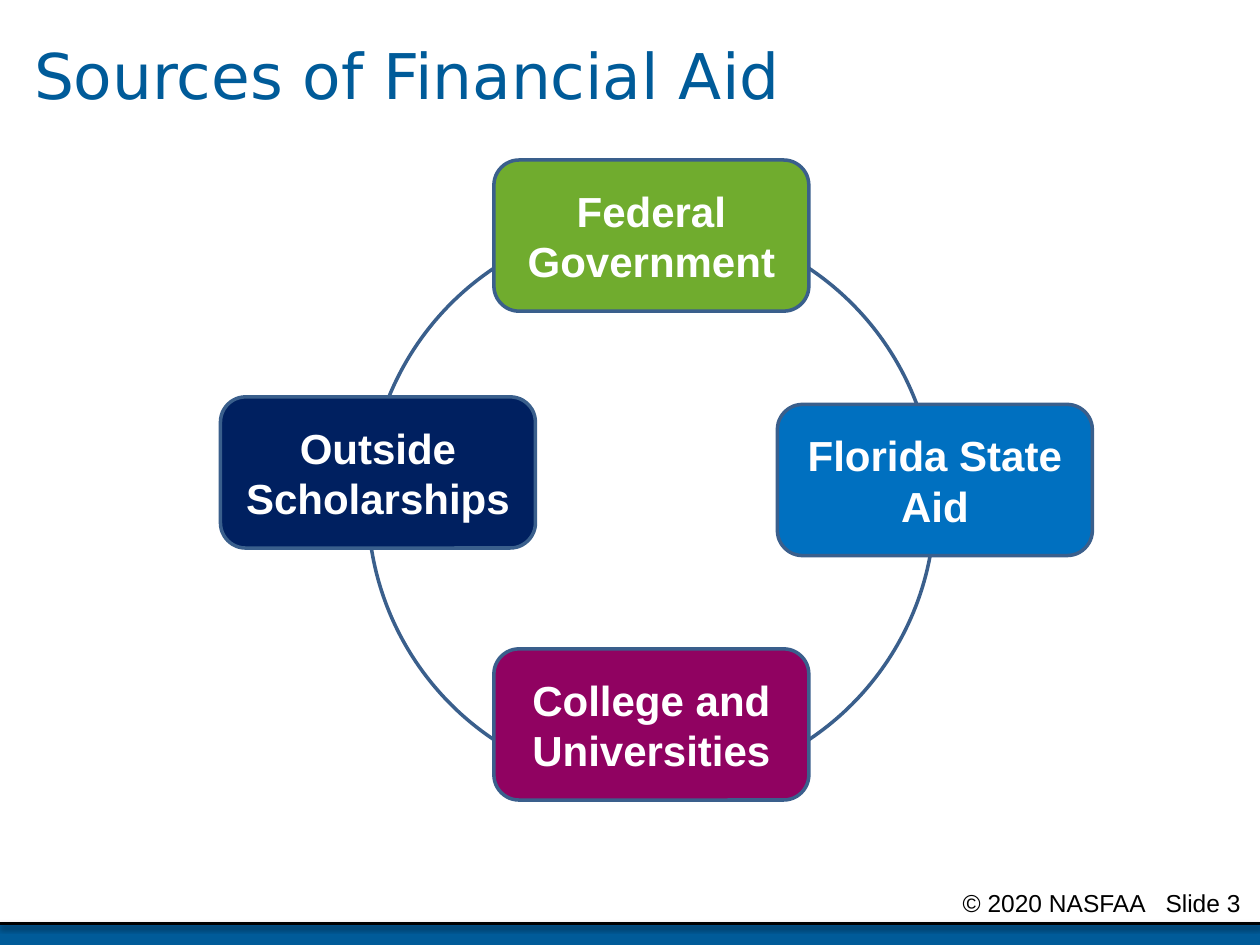
from lxml import etree
from pptx import Presentation, util as u
from pptx.dml.color import RGBColor
from pptx.enum import shapes, text
from pptx.oxml.ns import qn

WIDTH, HEIGHT = 10, 7.5
BOX_WIDTH, BOX_HEIGHT = 2.5, 1.2
RING_LEFT, RING_TOP, RING_SIZE = 2.92, 1.75, 4.5
CENTER_COLUMN = RING_LEFT + RING_SIZE / 2 - BOX_WIDTH / 2
FOOTER_TOP = 7.33
BLUE, OUTLINE, BLACK, WHITE = "005B99", "3A5F8C", "000000", "FFFFFF"

SOURCES = [
    ("Federal Government", CENTER_COLUMN, 1.27, "70AC2E"),
    ("Florida State\nAid", 6.17, 3.21, "0070C0"),
    ("College and Universities", CENTER_COLUMN, 5.15, "900261"),
    ("Outside Scholarships", 1.75, 3.15, "002060"),
]


def rgb(value):
    return RGBColor.from_string(value)


def inches(*lengths):
    return [u.Inches(length) for length in lengths]


def style_text(frame, size, font, color, align, bold=False):
    for paragraph in frame.paragraphs:
        paragraph.alignment = align
        for run in paragraph.runs:
            run.font.size = u.Pt(size)
            run.font.name = font
            run.font.bold = bold
            run.font.color.rgb = rgb(color)


def add_block(slide, preset, bounds, fill=None, line=None):
    block = slide.shapes.add_shape(preset, *inches(*bounds))
    block.shadow.inherit = False
    if fill:
        block.fill.solid()
        block.fill.fore_color.rgb = rgb(fill)
    else:
        block.fill.background()
    if line:
        block.line.color.rgb = rgb(line)
        block.line.width = u.Pt(2)
    else:
        block.line.fill.background()
    return block


def add_source(slide, label, left, top, fill):
    box = add_block(slide, shapes.MSO_SHAPE.ROUNDED_RECTANGLE,
                    (left, top, BOX_WIDTH, BOX_HEIGHT), fill, OUTLINE)
    frame = box.text_frame
    frame.text = label
    frame.word_wrap = True
    frame.vertical_anchor = text.MSO_ANCHOR.MIDDLE
    style_text(frame, 24, "Arial", WHITE, text.PP_ALIGN.CENTER, bold=True)


def add_footer_rule(slide):
    rule = slide.shapes.add_connector(
        shapes.MSO_CONNECTOR.STRAIGHT, *inches(0, FOOTER_TOP, WIDTH, FOOTER_TOP))
    rule.line.color.rgb = rgb(BLACK)
    rule.line.width = u.Pt(2)
    effects = etree.SubElement(rule._element.spPr, qn("a:effectLst"))
    shadow = etree.SubElement(effects, qn("a:outerShdw"), blurRad=str(u.Pt(3.1)),
                              dist=str(u.Pt(1.6)), dir="5400000", rotWithShape="0")
    tint = etree.SubElement(shadow, qn("a:srgbClr"), val=BLACK)
    etree.SubElement(tint, qn("a:alpha"), val="38000")


def add_copyright(slide):
    credit = slide.shapes.add_textbox(*inches(6.25, 7, 3.75, 0.25))
    frame = credit.text_frame
    frame.word_wrap = True
    frame.margin_left = u.Inches(1.39)
    frame.margin_right = 0
    frame.text = "© 2020 NASFAA\tSlide 3"
    properties = frame.paragraphs[0]._p.get_or_add_pPr()
    tabs = etree.SubElement(properties, qn("a:tabLst"))
    etree.SubElement(tabs, qn("a:tab"), pos=str(u.Inches(1.61)), algn="l")
    style_text(frame, 14, "Arial", BLACK, text.PP_ALIGN.LEFT)


def set_title(slide, wording):
    title = slide.shapes.title
    title.left, title.top, title.width, title.height = inches(0.17, 0, 9.67, 1.25)
    frame = title.text_frame
    frame.text = wording
    frame.auto_size = text.MSO_AUTO_SIZE.NONE
    frame.vertical_anchor = text.MSO_ANCHOR.MIDDLE
    frame.paragraphs[0].line_spacing = 0.9
    style_text(frame, 36, "DejaVu Sans", BLUE, text.PP_ALIGN.LEFT)


def main():
    deck = Presentation()
    deck.slide_width, deck.slide_height = inches(WIDTH, HEIGHT)
    slide = deck.slides.add_slide(deck.slide_layouts[5])
    set_title(slide, "Sources of Financial Aid")
    add_block(slide, shapes.MSO_SHAPE.RECTANGLE,
              (0, FOOTER_TOP, WIDTH, 0.2), fill=BLUE)
    add_footer_rule(slide)
    add_copyright(slide)
    add_block(slide, shapes.MSO_SHAPE.OVAL,
              (RING_LEFT, RING_TOP, RING_SIZE, RING_SIZE), line=OUTLINE)
    for source in SOURCES:
        add_source(slide, *source)
    deck.save("out.pptx")


if __name__ == "__main__":
    main()
